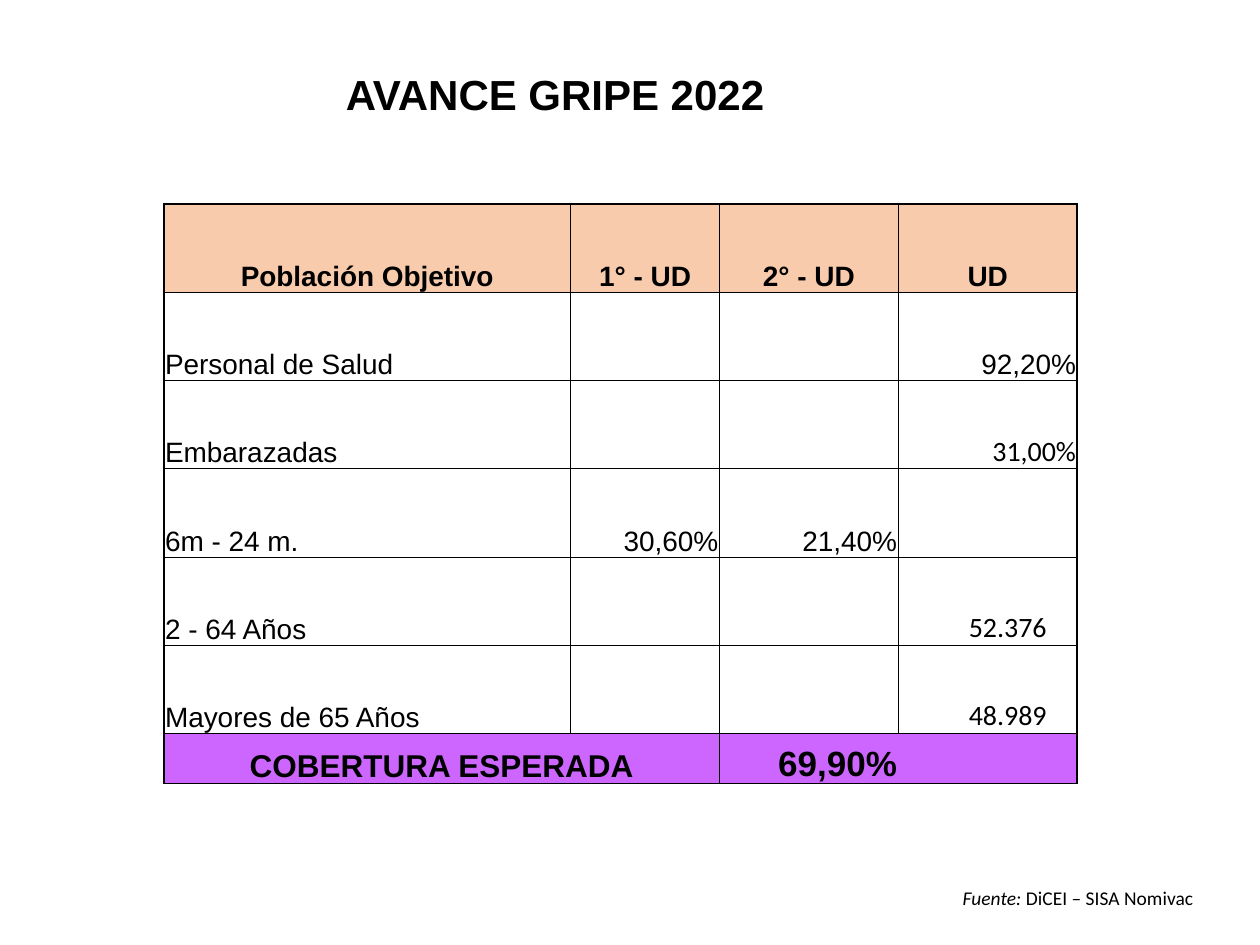
from lxml.etree import SubElement
from pptx import Presentation
from pptx.dml.color import RGBColor
from pptx.enum.text import MSO_ANCHOR, PP_ALIGN
from pptx.oxml.ns import qn
from pptx.util import Inches, Pt

BLACK, PEACH, PURPLE = "000000", "F8CBAD", "CC66FF"
LEFT, CENTER, RIGHT = PP_ALIGN.LEFT, PP_ALIGN.CENTER, PP_ALIGN.RIGHT
COLUMN_WIDTHS = [3.23, 1.18, 1.42, 0.34, 1.08]
ROW_HEIGHTS = [0.23, 0.4] + [0.7] * 6 + [0.4]
HEADER_ROW, FIRST_ROW, TOTAL_ROW = 2, 3, 8
MERGES = [(0, 0, 3), (1, 2, 4), (TOTAL_ROW, 0, 1)]
MERGES += [(row, 3, 4) for row in range(HEADER_ROW, TOTAL_ROW + 1)]
HEADERS = ["Población Objetivo", "1° - UD", "2° - UD", "UD"]
GROUPS = [
    ("Personal de Salud", {3: ("92,20%", "Arial", RIGHT)}),
    ("Embarazadas", {3: ("31,00%", "Calibri", RIGHT)}),
    ("6m - 24 m.", {1: ("30,60%", "Arial", RIGHT), 2: ("21,40%", "Arial", RIGHT)}),
    ("2 - 64 Años", {3: ("52.376", "Calibri", LEFT)}),
    ("Mayores de 65 Años", {3: ("48.989", "Calibri", LEFT)}),
]


def color(value):
    """Turn a hex string into a colour."""
    return RGBColor.from_string(value)


def add_text(paragraph, text, size=16, font="Arial", bold=False, italic=False, align=LEFT):
    """Append a formatted run to a paragraph."""
    paragraph.alignment = align
    run = paragraph.add_run()
    run.text = text
    run.font.size = Pt(size)
    run.font.name = font
    run.font.bold = bold
    run.font.italic = italic
    run.font.color.rgb = color(BLACK)


def border_widths(row, column):
    """Return left, right, top and bottom line widths in points."""
    if row < HEADER_ROW:
        return 0, 0, 0, row
    if row == TOTAL_ROW:
        return int(column != 3), int(column != 2), 1, 1
    return (
        1 if column == 0 else 0.5,
        1 if column >= 3 else 0.5,
        1 if row == HEADER_ROW else 0.5,
        1 if row == TOTAL_ROW - 1 else 0.5,
    )


def format_cell(cell, row, column):
    """Set borders, fill, margins and anchor of a cell."""
    properties = cell._tc.get_or_add_tcPr()
    for side, width in zip("LRTB", border_widths(row, column)):
        line = SubElement(properties, qn(f"a:ln{side}"), w=str(Pt(width)))
        if width:
            fill = SubElement(line, qn("a:solidFill"))
            SubElement(fill, qn("a:srgbClr"), val=BLACK)
        else:
            SubElement(line, qn("a:noFill"))
    fill_color = {HEADER_ROW: PEACH, TOTAL_ROW: PURPLE}.get(row)
    if fill_color:
        cell.fill.solid()
        cell.fill.fore_color.rgb = color(fill_color)
    else:
        cell.fill.background()
    cell.margin_left = cell.margin_right = cell.margin_top = Inches(0.01)
    cell.margin_bottom = 0
    cell.vertical_anchor = MSO_ANCHOR.BOTTOM
    cell.text_frame.paragraphs[0]._p.get_or_add_endParaRPr().set("sz", "800")


def add_coverage_table(slide, left, top, width, height):
    """Add the coverage table with its header, groups and total."""
    frame = slide.shapes.add_table(
        len(ROW_HEIGHTS), len(COLUMN_WIDTHS), left, top, width, height
    )
    table = frame.table
    table.first_row = table.horz_banding = False
    for column, size in zip(table.columns, COLUMN_WIDTHS):
        column.width = Inches(size)
    for row, size in zip(table.rows, ROW_HEIGHTS):
        row.height = Inches(size)
    for row in range(len(ROW_HEIGHTS)):
        for column in range(len(COLUMN_WIDTHS)):
            format_cell(table.cell(row, column), row, column)
    for row, first, last in MERGES:
        table.cell(row, first).merge(table.cell(row, last))

    def write(row, column, text, **style):
        """Write text into one cell."""
        add_text(table.cell(row, column).text_frame.paragraphs[0], text, **style)

    for column, header in enumerate(HEADERS):
        write(HEADER_ROW, column, header, bold=True, align=CENTER)
    for row, (group, values) in enumerate(GROUPS, FIRST_ROW):
        write(row, 0, group)
        for column, (value, font, align) in values.items():
            write(row, column, value, font=font, align=align)
            if align == LEFT:
                table.cell(row, column).margin_left = Inches(0.56)
    write(TOTAL_ROW, 0, "COBERTURA ESPERADA", size=18, bold=True, align=CENTER)
    write(TOTAL_ROW, 2, "69,90%", size=20, bold=True, align=RIGHT)


def place_title(slide, left, top, width, height):
    """Move and fill the title placeholder."""
    title = slide.shapes.title
    title.left, title.top, title.width, title.height = left, top, width, height
    title.text_frame.vertical_anchor = MSO_ANCHOR.MIDDLE
    add_text(title.text_frame.paragraphs[0], "AVANCE GRIPE 2022", size=24, bold=True, align=CENTER)


def add_source_note(slide, left, top, width, height):
    """Add the source line."""
    frame = slide.shapes.add_textbox(left, top, width, height).text_frame
    frame.word_wrap = True
    paragraph = frame.paragraphs[0]
    style = {"size": 11.1, "font": "Calibri", "align": RIGHT}
    add_text(paragraph, "Fuente: ", italic=True, **style)
    add_text(paragraph, "DiCEI – SISA Nomivac", **style)


def main():
    """Build and save the presentation."""
    presentation = Presentation()
    presentation.slide_width, presentation.slide_height = Inches(10), Inches(7.5)
    slide = presentation.slides.add_slide(presentation.slide_layouts[5])
    add_coverage_table(slide, Inches(1.3), Inches(0.99), Inches(7.25), Inches(5.23))
    add_source_note(slide, Inches(6.1), Inches(6.98), Inches(3.47), Inches(0.29))
    place_title(slide, Inches(1.69), Inches(0.49), Inches(5.43), Inches(0.5))
    presentation.save("out.pptx")


if __name__ == "__main__":
    main()
